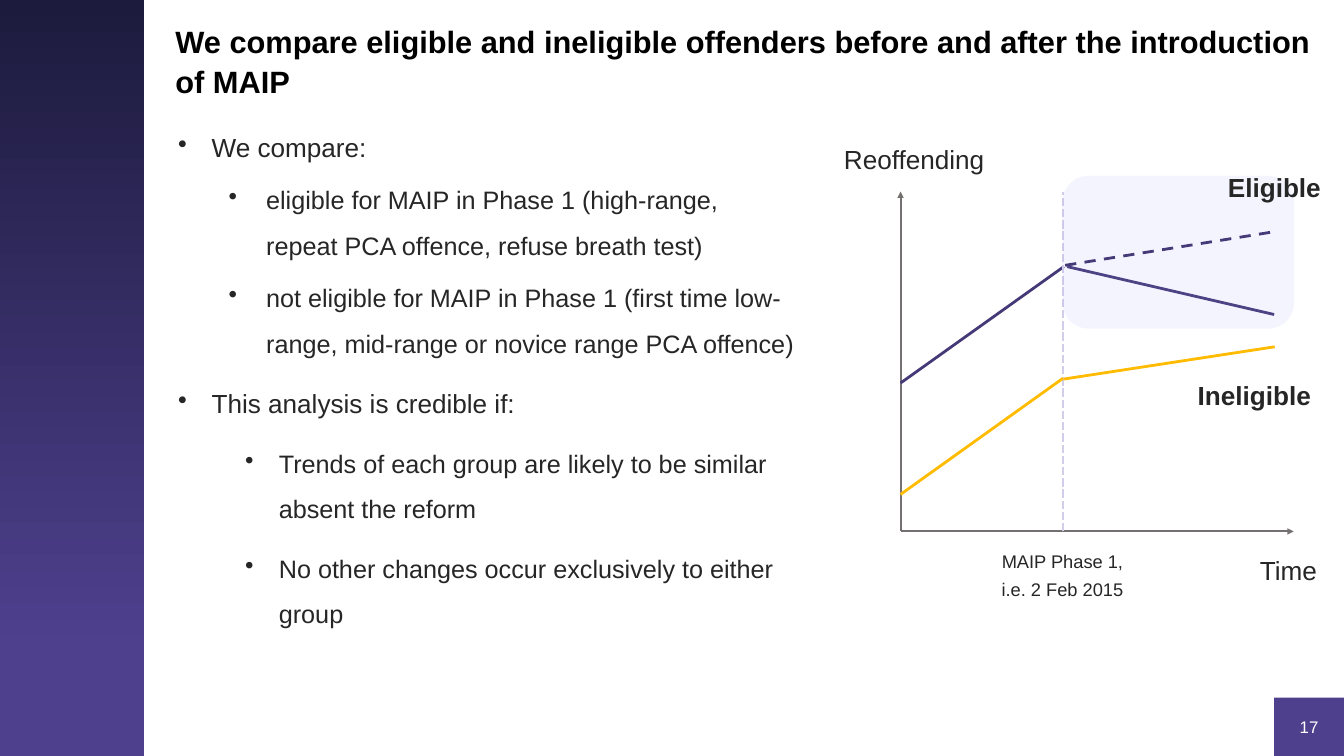
from dataclasses import dataclass

from lxml import etree
from pptx import Presentation
from pptx.dml.color import RGBColor
from pptx.enum.dml import MSO_LINE
from pptx.enum.shapes import MSO_CONNECTOR, MSO_SHAPE
from pptx.enum.text import MSO_ANCHOR, PP_ALIGN
from pptx.oxml.ns import qn
from pptx.util import Cm, Pt

RECT, ROUND = MSO_SHAPE.RECTANGLE, MSO_SHAPE.ROUNDED_RECTANGLE
STRAIGHT = MSO_CONNECTOR.STRAIGHT
LEFT, CENTER = PP_ALIGN.LEFT, PP_ALIGN.CENTER
MIDDLE = MSO_ANCHOR.MIDDLE
DASH, DOTS = MSO_LINE.DASH, MSO_LINE.SQUARE_DOT


@dataclass
class Theme:
    font: str = "Arial"
    black: str = "000000"
    ink: str = "262626"
    white: str = "FFFFFF"
    night: str = "1C1B3D"
    purple: str = "4F408E"
    trend: str = "453977"
    gold: str = "FFBB00"
    axis: str = "767171"
    phase: str = "D2CDE9"
    tint: str = "9999FF"
    title: float = 33
    body: float = 28
    sub: float = 27
    note: float = 19.6
    page: float = 18


class Page:
    def __init__(self, slide, theme):
        self.shapes = slide.shapes
        self.theme = theme

    def style(self, para, size, color, bold=False, align=LEFT, lead=1, before=0):
        para.alignment = align
        para.line_spacing = lead
        para.space_before = Pt(before)
        font = para.font
        font.name, font.size, font.bold = self.theme.font, Pt(size), bold
        font.color.rgb = RGBColor.from_string(color)

    def text(self, box, words, size, color=None, **look):
        frame = self.shapes.add_textbox(*map(Cm, box)).text_frame
        frame.word_wrap = True
        para = frame.paragraphs[0]
        para.text = words
        self.style(para, size, color or self.theme.ink, **look)

    def bullets(self, box, items):
        """Each item is (text, size, left margin, hang, space before)."""
        frame = self.shapes.add_textbox(*map(Cm, box)).text_frame
        frame.word_wrap = True
        for i, (words, size, margin, hang, before) in enumerate(items):
            para = frame.add_paragraph() if i else frame.paragraphs[0]
            para.text = words
            props = para._p.get_or_add_pPr()
            props.set("marL", str(Cm(margin)))
            props.set("indent", str(-Cm(hang)))
            etree.SubElement(props, qn("a:buChar")).set("char", "•")
            self.style(para, size, self.theme.ink, lead=1.5, before=before)

    def block(self, box, color, kind=RECT, alpha=None, fade=None):
        shape = self.shapes.add_shape(kind, *map(Cm, box))
        shape.shadow.inherit = False
        shape.line.fill.background()
        if fade:
            shape.fill.gradient()
            shape.fill.gradient_angle = 270
            stops = shape.fill.gradient_stops
            for stop, tone, place in zip(stops, (color, fade), (0, 0.86)):
                stop.color.rgb = RGBColor.from_string(tone)
                stop.position = place
        else:
            shape.fill.solid()
            shape.fill.fore_color.rgb = RGBColor.from_string(color)
        if alpha:
            tone = shape._element.spPr.find(".//" + qn("a:srgbClr"))
            etree.SubElement(tone, qn("a:alpha")).set("val", str(alpha * 1000))
        return shape

    def badge(self, box, words):
        shape = self.block(box, self.theme.purple)
        shape.text_frame.vertical_anchor = MIDDLE
        para = shape.text_frame.paragraphs[0]
        para.text = words
        self.style(para, self.theme.page, self.theme.white, align=CENTER)

    def line(self, start, end, color, width=3, dash=None, arrow=False):
        line = self.shapes.add_connector(STRAIGHT, *map(Cm, start + end))
        line.line.color.rgb = RGBColor.from_string(color)
        line.line.width = Pt(width)
        if dash:
            line.line.dash_style = dash
        props = line._element.spPr
        if arrow:
            tail = etree.SubElement(props.find(qn("a:ln")), qn("a:tailEnd"))
            tail.set("type", "triangle")
        etree.SubElement(props, qn("a:effectLst"))


def main():
    deck = Presentation()
    deck.slide_width, deck.slide_height = Cm(50.8), Cm(28.58)
    theme = Theme()
    page = Page(deck.slides.add_slide(deck.slide_layouts[6]), theme)

    # Sidebar and page number
    page.block((0, 0, 5.44, 28.58), theme.night, fade=theme.purple)
    page.badge((48.16, 26.37, 2.64, 2.21), "17")

    # Title and bullets
    page.text((6.38, 0.58, 44.07, 3.53),
              "We compare eligible and ineligible offenders before and after "
              "the introduction of MAIP",
              theme.title, theme.black, bold=True, lead=1.1, before=15)
    top = (theme.body, 1.27, 1.27, 15)
    group = (theme.sub, 3.33, 1.42, 7.5)
    test = (theme.sub, 3.81, 1.27, 15)
    page.bullets((6.48, 4.24, 23.85, 21.64), [
        ("We compare:", *top),
        ("eligible for MAIP in Phase 1 (high-range, repeat PCA offence, "
         "refuse breath test)", *group),
        ("not eligible for MAIP in Phase 1 (first time low-range, mid-range "
         "or novice range PCA offence)", *group),
        ("This analysis is credible if:", *top),
        ("Trends of each group are likely to be similar absent the reform",
         *test),
        ("No other changes occur exclusively to either group", *test),
    ])

    # Axes
    left, base, peak, start = 34.04, 20.09, 7.24, 40.18
    for end in ((left, peak), (48.9, base)):
        page.line((left, base), end, theme.axis, 2.25, arrow=True)

    # Trends and start of the phase
    page.line((left, 14.48), (40.21, 10.08), theme.trend)
    page.line((40.34, 10.08), (48.16, 11.89), theme.trend)
    page.line((start, base), (start, peak), theme.phase, dash=DOTS)
    page.block((40.17, 6.65, 8.74, 5.77), theme.tint, ROUND, alpha=10)
    page.line((left, 18.69), (start, 14.3), theme.gold)
    page.line((40.21, 14.33), (48.18, 13.11), theme.gold)
    page.line((40.26, 10.03), (48.16, 8.76), theme.trend, dash=DASH)

    # Labels
    page.text((37.06, 20.42, 6.2, 2.36), "MAIP Phase 1, i.e. 2 Feb 2015",
              theme.note, align=CENTER, lead=1.3, before=15)
    for box, words in (((47.37, 20.24, 3.05, 2.36), "Time"),
                       ((31.65, 4.72, 6.15, 2.34), "Reoffending")):
        page.text(box, words, theme.body, lead=1.5, before=15)
    for box, words in (((44.91, 14.21, 5, 1.7), "Ineligible"),
                       ((45.67, 6.36, 5, 1.7), "Eligible")):
        page.text(box, words, theme.body, bold=True, align=CENTER)

    deck.save("out.pptx")


if __name__ == "__main__":
    main()
